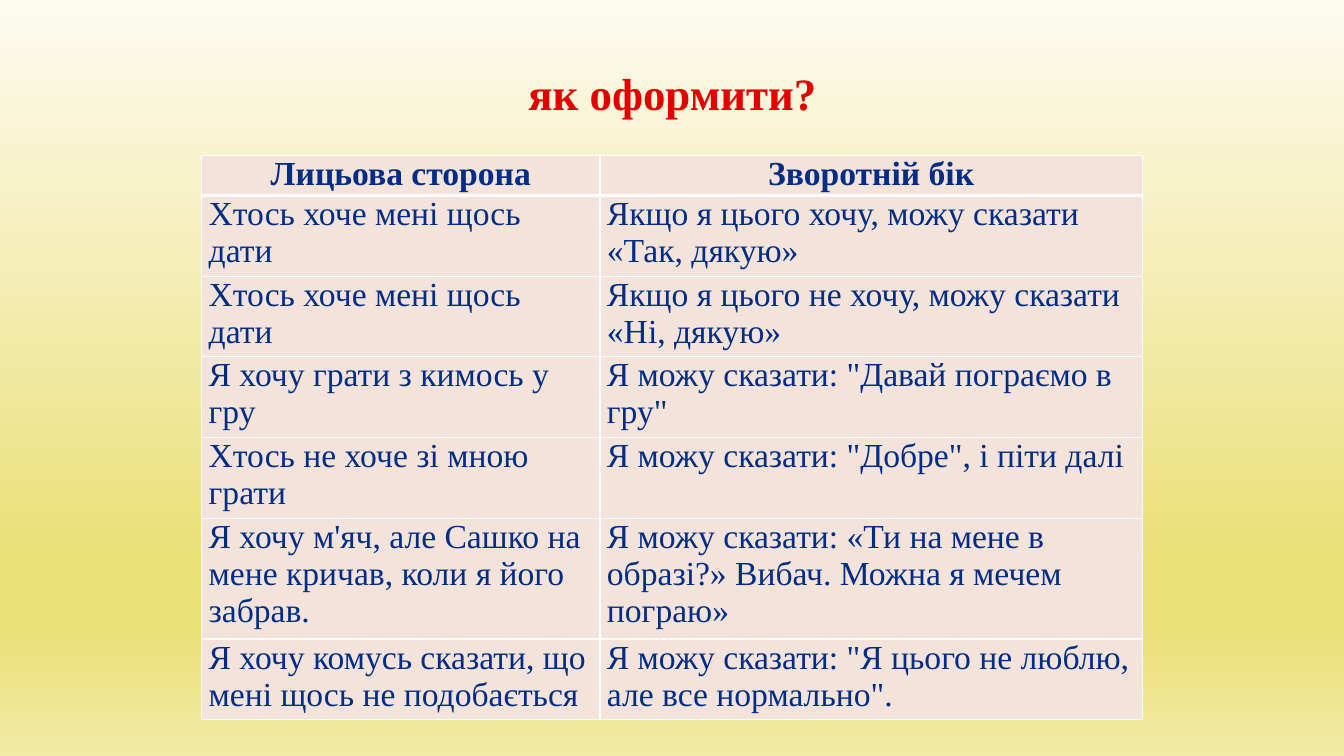
from lxml.etree import SubElement
from pptx import Presentation
from pptx.dml.color import RGBColor
from pptx.enum.text import MSO_ANCHOR as Anchor, PP_ALIGN as Align
from pptx.oxml.ns import qn
from pptx.util import Inches, Pt


def color(text):
    return RGBColor.from_string(text)


class Deck:
    """Holds the style and the current slide."""
    font = "Times New Roman"
    red, navy, cream, white = "E30000", "012D86", "F3E3DA", "FFFFFF"

    def __init__(self):
        self.show = Presentation()
        self.show.slide_width, self.show.slide_height = Inches(13.33), Inches(7.5)
        self.slide = self.show.slides.add_slide(self.show.slide_layouts[5])

    def back(self, stops):
        self.slide.background.fill.gradient()
        grad = next(self.slide.element.iter(qn("a:gradFill")))
        grad.find(qn("a:lin")).set("ang", str(90 * 60000))
        ramp = grad.find(qn("a:gsLst"))
        ramp.clear()
        for place, tone in stops:
            stop = SubElement(ramp, qn("a:gs"), pos=str(place * 1000))
            SubElement(stop, qn("a:srgbClr"), val=tone)

    def label(self, frame, text, size, tone, bold, align):
        frame.text = text
        line = frame.paragraphs[0]
        line.alignment = align
        font = line.font
        font.name, font.size, font.bold = self.font, Pt(size), bold
        font.color.rgb = color(tone)

    def title(self, text, left, top, width, height):
        box = self.slide.shapes.title
        box.left, box.top = Inches(left), Inches(top)
        box.width, box.height = Inches(width), Inches(height)
        frame = box.text_frame
        frame.word_wrap = True
        frame.vertical_anchor = Anchor.MIDDLE
        self.label(frame, text, 32, self.red, True, Align.CENTER)

    def edge(self, cell, side, width):
        props = cell._tc.get_or_add_tcPr()
        line = SubElement(props, qn("a:ln" + side), w=str(Pt(width)))
        fill = SubElement(line, qn("a:solidFill"))
        SubElement(fill, qn("a:srgbClr"), val=self.white)

    def cell(self, cell, text, row):
        head = row == 0
        cell.margin_left = cell.margin_right = Inches(0.07)
        cell.margin_top = cell.margin_bottom = 0
        for side in "LRTB":
            thick = (row, side) in ((0, "B"), (1, "T"))
            self.edge(cell, side, 3 if thick else 1)
        cell.fill.solid()
        cell.fill.fore_color.rgb = color(self.cream)
        align = Align.CENTER if head else Align.LEFT
        self.label(cell.text_frame, text, 24, self.navy, head, align)

    def table(self, data, left, top, widths, heights):
        size = Inches(sum(widths)), Inches(sum(heights))
        table = self.slide.shapes.add_table(
            len(data), len(widths), Inches(left), Inches(top), *size).table
        table.horz_banding = False
        for col, width in zip(table.columns, widths):
            col.width = Inches(width)
        for row, (texts, height) in enumerate(zip(data, heights)):
            table.rows[row].height = Inches(height)
            for col, text in enumerate(texts):
                self.cell(table.cell(row, col), text, row)


CARDS = [
    ("Лицьова сторона", "Зворотній бік"),
    ("Хтось хоче мені щось дати", "Якщо я цього хочу, можу сказати «Так, дякую»"),
    ("Хтось хоче мені щось дати", "Якщо я цього не хочу, можу сказати «Ні, дякую»"),
    ("Я хочу грати з кимось у гру", 'Я можу сказати: "Давай пограємо в гру"'),
    ("Хтось не хоче зі мною грати", 'Я можу сказати: "Добре", і піти далі'),
    ("Я хочу м'яч, але Сашко на мене кричав, коли я його забрав.",
     "Я можу сказати: «Ти на мене в образі?» Вибач. Можна я мечем пограю»"),
    ("Я хочу комусь сказати, що мені щось не подобається",
     'Я можу сказати: "Я цього не люблю, але все нормально".'),
]


def main():
    deck = Deck()
    deck.back([(0, "FDFBF0"), (74, "EBDF78"), (83, "EBDF78"), (100, "F2EAA5")])
    deck.title("як оформити?", 0.67, 0.51, 12, 0.82)
    deck.table(CARDS, 2, 1.54, [3.95, 5.38], [0.4] + [0.8] * 4 + [1.2, 0.8])
    deck.show.save("out.pptx")


if __name__ == "__main__":
    main()
